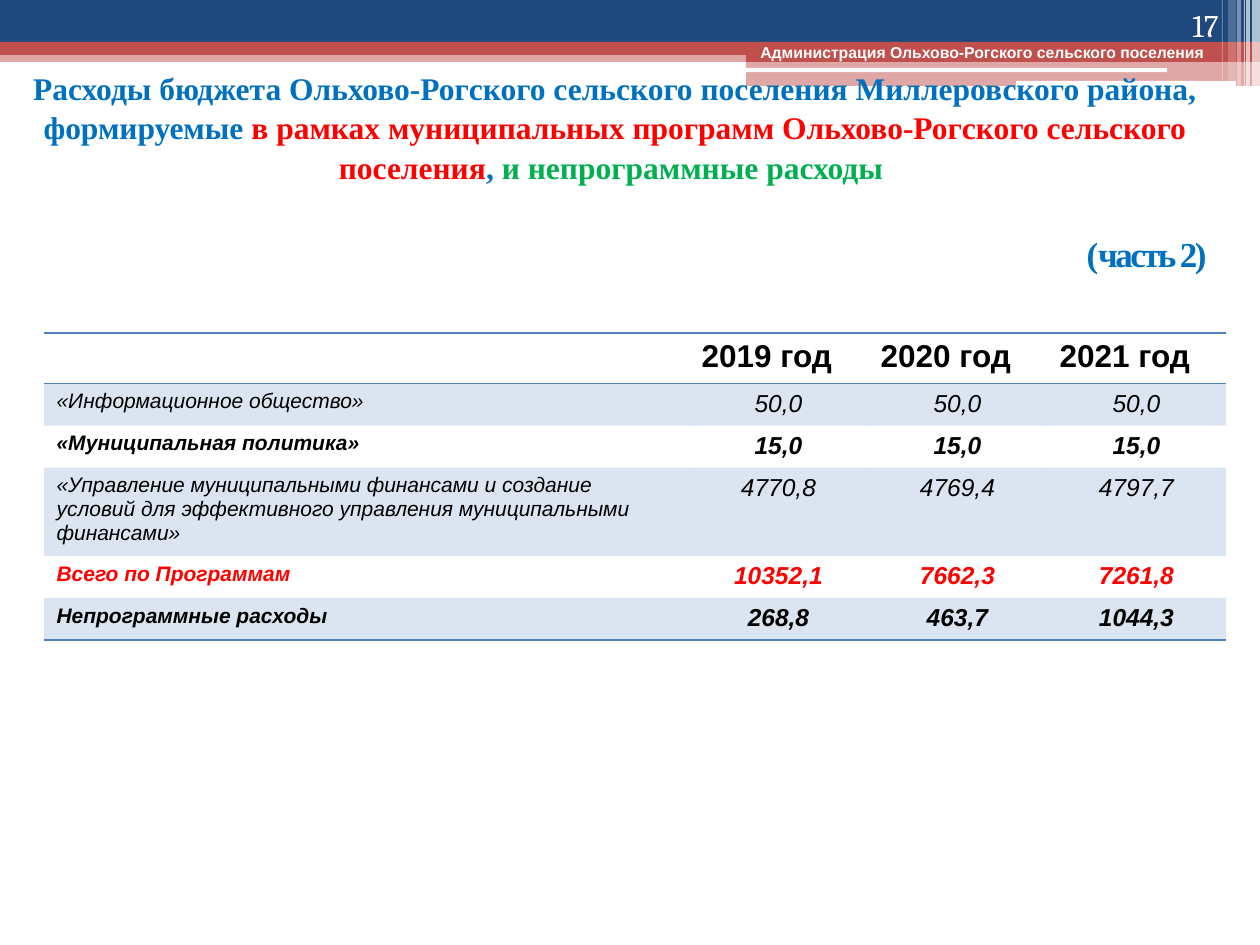
from dataclasses import dataclass

from lxml import etree
from pptx import Presentation
from pptx import util as u
from pptx.dml.color import RGBColor
from pptx.enum import shapes, text
from pptx.oxml import ns

EMU_PER_PX = 914400 / 126
COLORS = {
    "navy": "1F497D", "brick": "C0504D", "white": "FFFFFF", "black": "000000",
    "blue": "0070C0", "red": "FF0000", "green": "00B050", "steel": "4F81BD",
}
RECT = shapes.MSO_SHAPE.RECTANGLE
ROUND = shapes.MSO_SHAPE.ROUNDED_RECTANGLE
LEFT, CENTER, RIGHT = text.PP_ALIGN.LEFT, text.PP_ALIGN.CENTER, text.PP_ALIGN.RIGHT
TOP, MIDDLE, BOTTOM = (text.MSO_ANCHOR.TOP, text.MSO_ANCHOR.MIDDLE,
                       text.MSO_ANCHOR.BOTTOM)
NO_GRID_STYLE = "{2D5ABB26-0587-4C30-8999-92F81FD0307C}"


@dataclass
class Bar:
    x: int
    y: int
    w: int
    h: int
    color: str
    alpha: int = 100
    kind: int = RECT


@dataclass
class Style:
    size: int
    color: str = "black"
    bold: bool = False
    italic: bool = False
    font: str = "Arial"
    spacing: float = 0


@dataclass
class Row:
    label: str
    values: tuple
    height: int
    color: str = "black"
    bold: bool = True


BARS = [
    # Header bands
    Bar(0, 50, 1260, 12, "brick", 50),
    Bar(0, 0, 1260, 42, "navy"),
    Bar(0, 42, 1260, 13, "brick"),
    Bar(746, 49, 514, 13, "brick"),
    Bar(746, 61, 514, 25, "brick", 50),
    Bar(745, 68, 422, 4, "white", kind=ROUND),
    Bar(1016, 81, 220, 5, "white", kind=ROUND),
    # Vertical stripes in the corner
    Bar(1252, 0, 8, 86, "white", 65),
    Bar(1246, 0, 4, 86, "white", 65),
    Bar(1244, 0, 1, 86, "white", 60),
    Bar(1237, 0, 4, 86, "white", 40),
    Bar(1228, 0, 8, 81, "white", 20),
    Bar(1222, 0, 1, 81, "white", 30),
]
YEARS = ("2019 год", "2020 год", "2021 год")
ROWS = [
    Row("«Информационное общество»", ("50,0",) * 3, 40, bold=False),
    Row("«Муниципальная политика»", ("15,0",) * 3, 40),
    Row("«Управление муниципальными финансами и создание условий для "
        "эффективного управления муниципальными финансами»",
        ("4770,8", "4769,4", "4797,7"), 83, bold=False),
    Row("Всего по Программам", ("10352,1", "7662,3", "7261,8"), 40, "red"),
    Row("Непрограммные расходы", ("268,8", "463,7", "1044,3"), 40),
]
COLUMNS = (645, 179, 179, 179)
HEADER_HEIGHT = 49


def px(n: float) -> u.Emu:
    return u.Emu(round(n * EMU_PER_PX))


def set_fill(fill, color: str, alpha: int = 100) -> None:
    fill.solid()
    fill.fore_color.rgb = RGBColor.from_string(COLORS[color])
    if alpha < 100:
        clr = fill._xPr.find(".//" + ns.qn("a:srgbClr"))
        etree.SubElement(clr, ns.qn("a:alpha")).set("val", str(alpha * 1000))


def add_bar(s, bar: Bar) -> None:
    sp = s.shapes.add_shape(bar.kind, px(bar.x), px(bar.y), px(bar.w), px(bar.h))
    sp.shadow.inherit = False
    sp.line.fill.background()
    set_fill(sp.fill, bar.color, bar.alpha)


def add_run(p, words: str, style: Style) -> None:
    r = p.add_run()
    r.text = words
    f = r.font
    f.size, f.name = u.Pt(style.size), style.font
    f.bold, f.italic = style.bold, style.italic
    f.color.rgb = RGBColor.from_string(COLORS[style.color])
    if style.spacing:
        r._r.get_or_add_rPr().set("spc", str(round(style.spacing * 100)))


def add_text(s, x: int, y: int, w: int, h: int, align, anchor):
    tf = s.shapes.add_textbox(px(x), px(y), px(w), px(h)).text_frame
    tf.word_wrap = True
    tf.vertical_anchor = anchor
    p = tf.paragraphs[0]
    p.alignment = align
    return p


def add_title(s) -> None:
    def serif(size: int, color: str, spacing: float = 0) -> Style:
        return Style(size, color, True, font="Times New Roman", spacing=spacing)

    p = add_text(s, 0, 86, 1230, 169, CENTER, MIDDLE)
    p.line_spacing = 1.05
    tabs = etree.SubElement(p._p.get_or_add_pPr(), ns.qn("a:tabLst"))
    tab = etree.SubElement(tabs, ns.qn("a:tab"))
    tab.set("pos", str(px(1063)))
    tab.set("algn", "l")
    lines = [
        [("Расходы бюджета Ольхово-Рогского сельского поселения "
          "Миллеровского района, формируемые ", serif(18, "blue")),
         ("в рамках муниципальных программ Ольхово-Рогского сельского "
          "поселения", serif(18, "red")),
         (", ", serif(18, "blue")),
         ("и непрограммные расходы ", serif(18, "green"))],
        [("\t", serif(20, "green"))],
        [("\t(", serif(20, "blue")), ("часть 2)", serif(20, "blue", -1.5))],
    ]
    for i, line in enumerate(lines):
        if i:
            p.add_line_break()
        for words, style in line:
            add_run(p, words, style)


def add_border(cell, side: str) -> None:
    ln = etree.Element(ns.qn(f"a:{side}"), w=str(u.Pt(1)))
    fill = etree.SubElement(ln, ns.qn("a:solidFill"))
    etree.SubElement(fill, ns.qn("a:srgbClr")).set("val", COLORS["steel"])
    tc_pr = cell._tc.get_or_add_tcPr()
    # Borders come before the fill, in the order top, bottom
    tc_pr.insert(len(tc_pr.findall(ns.qn("a:lnT"))), ln)


def fill_cell(cell, words: str, style: Style, align, banded: bool) -> None:
    if banded:
        set_fill(cell.fill, "steel", 20)
    else:
        cell.fill.background()
    p = cell.text_frame.paragraphs[0]
    p.alignment = align
    if words:
        add_run(p, words, style)


def add_budget_table(s) -> None:
    heights = [HEADER_HEIGHT] + [row.height for row in ROWS]
    table = s.shapes.add_table(len(heights), len(COLUMNS), px(44), px(333),
                               px(sum(COLUMNS)), px(sum(heights))).table
    table.first_row = table.horz_banding = False
    table._tbl.tblPr.find(ns.qn("a:tableStyleId")).text = NO_GRID_STYLE
    for column, width in zip(table.columns, COLUMNS):
        column.width = px(width)
    for line, height in zip(table.rows, heights):
        line.height = px(height)

    for c, words in enumerate(("",) + YEARS):
        fill_cell(table.cell(0, c), words, Style(18, bold=True), LEFT, False)
    for i, row in enumerate(ROWS, 1):
        for c, words in enumerate((row.label,) + row.values):
            style = Style(14 if c else 12, row.color, row.bold, True)
            fill_cell(table.cell(i, c), words, style, CENTER if c else LEFT,
                      i % 2 == 1)
    for c in range(len(COLUMNS)):
        add_border(table.cell(0, c), "lnT")
        add_border(table.cell(0, c), "lnB")
        add_border(table.cell(len(ROWS), c), "lnB")


def main() -> None:
    prs = Presentation()
    prs.slide_width, prs.slide_height = px(1260), px(945)
    s = prs.slides.add_slide(prs.slide_layouts[6])
    for bar in BARS:
        add_bar(s, bar)
    # Header texts
    add_run(add_text(s, 748, 37, 476, 32, LEFT, TOP),
            "Администрация Ольхово-Рогского сельского поселения",
            Style(9, "white", True))
    add_title(s)
    add_run(add_text(s, 1126, 0, 105, 50, RIGHT, BOTTOM), "17",
            Style(18, "white", font="Cambria"))
    add_budget_table(s)
    prs.save("out.pptx")


if __name__ == "__main__":
    main()
